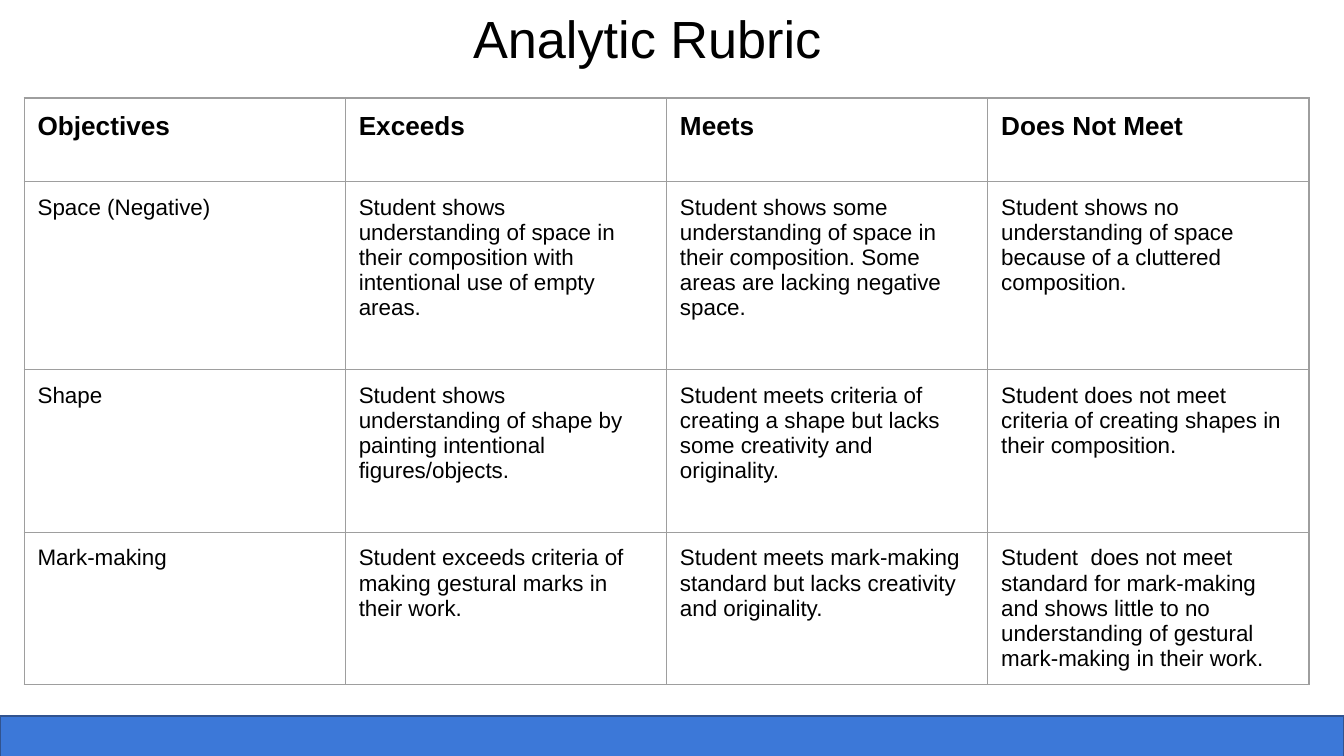
import pptx
import pptx.dml.color
import pptx.enum.shapes
import pptx.enum.text
import pptx.oxml
import pptx.oxml.ns
import pptx.util

WIDTH = 10
HEIGHT = WIDTH * 9 / 16
COLORS = {
    "text": "000000",
    "grid": "9E9E9E",
    "band": "3C78D8",
    "band_edge": "31538F",
}
TITLE_FORMAT = {"name": "Arial", "size": pptx.util.Pt(28), "bold": False}
HEADING_FORMAT = {"name": "Arial", "size": pptx.util.Pt(14), "bold": True}
BODY_FORMAT = {"name": "Arial", "size": pptx.util.Pt(12), "bold": False}
INSETS = {
    f"margin_{side}": pptx.util.Inches(0.1)
    for side in ("left", "top", "right", "bottom")
}
ROW_HEIGHTS = [0.62, 1.4, 1.21, 1.09]
RUBRIC = [
    ["Objectives", "Exceeds", "Meets", "Does Not Meet"],
    [
        "Space (Negative)",
        "Student shows understanding of space in their composition with intentional use of empty areas.",
        "Student shows some understanding of space in their composition. Some areas are lacking negative space.",
        "Student shows no understanding of space because of a cluttered composition.",
    ],
    [
        "Shape",
        "Student shows understanding of shape by painting intentional figures/objects.",
        "Student meets criteria of creating a shape but lacks some creativity and originality.",
        "Student does not meet criteria of creating shapes in their composition.",
    ],
    [
        "Mark-making",
        "Student exceeds criteria of making gestural marks in their work.",
        "Student meets mark-making standard but lacks creativity and originality.",
        "Student  does not meet standard for mark-making and shows little to no understanding of gestural mark-making in their work.",
    ],
]


def rgb(name):
    return pptx.dml.color.RGBColor.from_string(COLORS[name])


def inches(box):
    return [pptx.util.Inches(length) for length in box]


def apply(target, values):
    for name, value in values.items():
        setattr(target, name, value)


def write(frame, wording, font_format):
    frame.text = wording
    paragraph = frame.paragraphs[0]
    paragraph.alignment = pptx.enum.text.PP_ALIGN.LEFT
    font = paragraph.runs[0].font
    apply(font, font_format)
    font.color.rgb = rgb("text")


def outline_cell(cell):
    """Give all four sides of a cell a thin grid line."""
    properties = cell._tc.get_or_add_tcPr()
    for position, side in enumerate(("lnL", "lnR", "lnT", "lnB")):
        border = pptx.oxml.parse_xml(
            f'<a:{side} {pptx.oxml.ns.nsdecls("a")} w="{pptx.util.Pt(0.75)}">'
            f'<a:solidFill><a:srgbClr val="{COLORS["grid"]}"/></a:solidFill>'
            f"</a:{side}>"
        )
        properties.insert(position, border)


def add_footer_band(slide, box):
    band = slide.shapes.add_shape(
        pptx.enum.shapes.MSO_SHAPE.RECTANGLE, *inches(box)
    )
    band.shadow.inherit = False
    band.fill.solid()
    band.fill.fore_color.rgb = rgb("band")
    band.line.color.rgb = rgb("band_edge")
    band.line.width = pptx.util.Pt(1)


def place_title(slide, box, wording):
    title = slide.shapes.title
    apply(title, dict(zip(("left", "top", "width", "height"), inches(box))))
    frame = title.text_frame
    apply(frame, INSETS)
    frame.word_wrap = True
    frame.auto_size = pptx.enum.text.MSO_AUTO_SIZE.NONE
    frame.vertical_anchor = pptx.enum.text.MSO_ANCHOR.TOP
    write(frame, wording, TITLE_FORMAT)


def add_rubric(slide, box):
    rubric = slide.shapes.add_table(
        len(RUBRIC), len(RUBRIC[0]), *inches(box)
    ).table
    apply(rubric, {"first_row": False, "horz_banding": False})
    for row, height in zip(rubric.rows, ROW_HEIGHTS):
        row.height = pptx.util.Inches(height)
    for row_index, criteria in enumerate(RUBRIC):
        font_format = BODY_FORMAT if row_index else HEADING_FORMAT
        for column_index, wording in enumerate(criteria):
            cell = rubric.cell(row_index, column_index)
            apply(cell, INSETS)
            cell.vertical_anchor = pptx.enum.text.MSO_ANCHOR.TOP
            cell.fill.background()
            outline_cell(cell)
            write(cell.text_frame, wording, font_format)


def main():
    deck = pptx.Presentation()
    deck.slide_width, deck.slide_height = inches((WIDTH, HEIGHT))
    title_only = deck.slide_layouts[5]
    slide = deck.slides.add_slide(title_only)
    add_footer_band(slide, (0, 5.33, WIDTH, 0.3))
    place_title(slide, (3.42, -0.05, 9.32, 0.63), "Analytic Rubric")
    add_rubric(slide, (0.18, 0.73, 4 * 2.39, sum(ROW_HEIGHTS)))
    deck.save("out.pptx")


if __name__ == "__main__":
    main()
